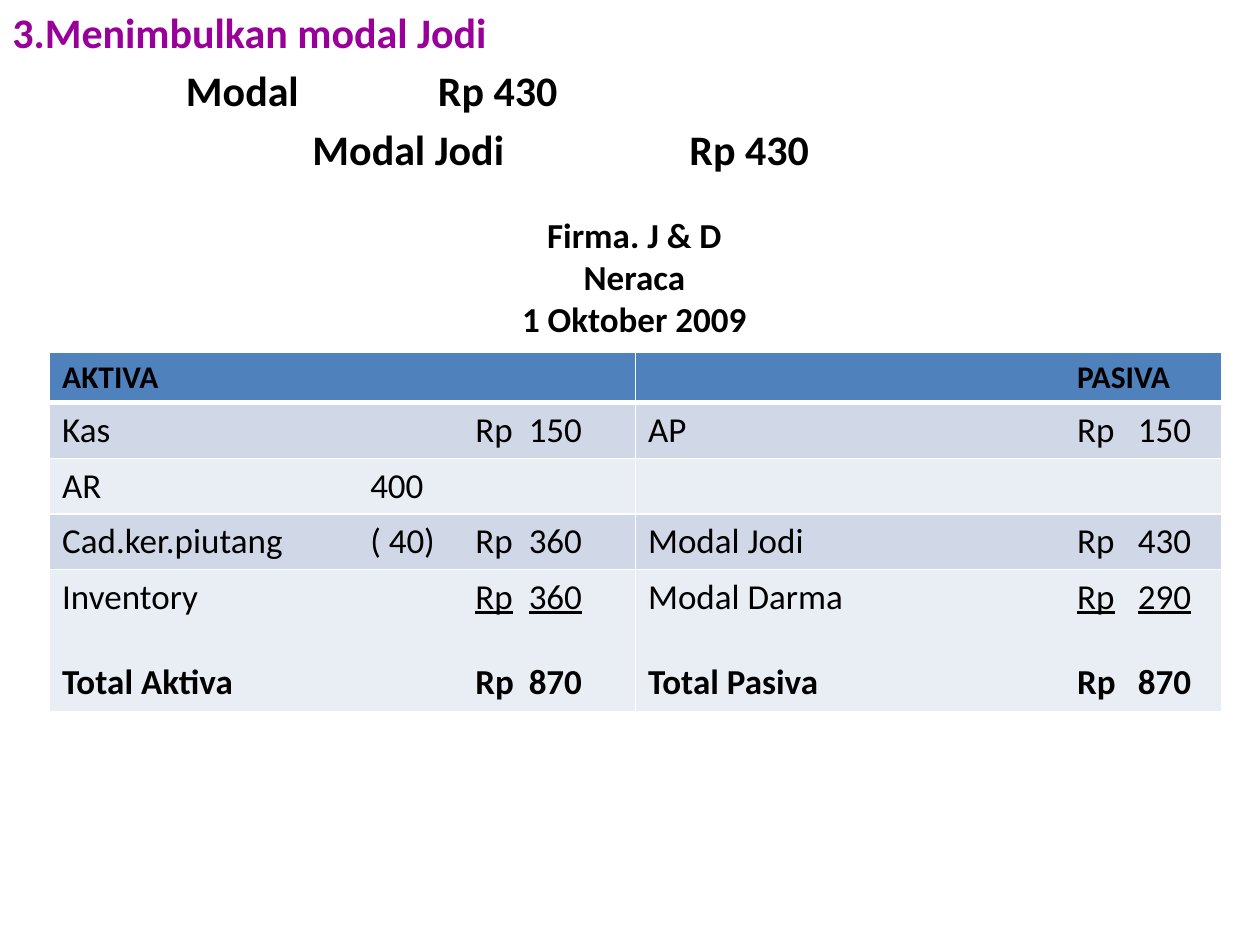
from lxml.etree import SubElement
from pptx import Presentation
from pptx.dml.color import RGBColor
from pptx.enum.text import PP_ALIGN
from pptx.oxml.ns import qn
from pptx.util import Cm, Pt

# Content: journal lines as (text, colour, tab stops in cm)
JOURNAL = [
    ("3.Menimbulkan modal Jodi", "990099", []),
    ("\tModal\tRp 430", "000000", [(3.5, "l"), (8.58, "l")]),
    ("\tModal Jodi\tRp 430", "000000", [(6.05, "l"), (13.65, "l")]),
]
TITLE = ["Firma. J & D", "Neraca", "1 Oktober 2009"]

# Each cell holds lines of (label, amount, style)
HEAD, ITEM, LAST, TOTAL = "head", "item", "last", "total"
ROWS = [
    ([("AKTIVA", "", HEAD)], [("\tPASIVA", "", HEAD)]),
    ([("Kas\t\t", "Rp\t150", ITEM)], [("AP\t", "Rp\t150", ITEM)]),
    ([("AR\t400", "", ITEM)], []),
    ([("Cad.ker.piutang\t( 40)\t", "Rp\t360", ITEM)],
     [("Modal Jodi\t", "Rp\t430", ITEM)]),
    ([("Inventory\t\t", "Rp\t360", LAST), ("Total Aktiva\t\t", "Rp\t870", TOTAL)],
     [("Modal Darma\t", "Rp\t290", LAST), ("Total Pasiva\t", "Rp\t870", TOTAL)]),
]
STOPS = [
    [(6.21, "l"), (8.33, "l"), (10.48, "r")],
    [(8.65, "l"), (10.95, "r")],
]
HIGH = [1.02, 1.12, 1.12, 1.12, 2.87]
WIDE = 11.81
FILLS = ["4F81BD", "D0D8E8", "E9EDF4"]


def hue(code):
    return RGBColor.from_string(code)


def set_font(par, size, bold, color="000000"):
    font = par.font
    font.name, font.size, font.bold = "Calibri", Pt(size), bold
    font.color.rgb = hue(color)


def set_tabs(par, stops):
    tabs = SubElement(par._p.get_or_add_pPr(), qn("a:tabLst"))
    for pos, side in stops:
        SubElement(tabs, qn("a:tab"), pos=str(Cm(pos)), algn=side)


def add_box(slide, left, top, width, height):
    frame = slide.shapes.add_textbox(Cm(left), Cm(top), Cm(width), Cm(height)).text_frame
    frame.word_wrap = True
    return frame


def next_par(frame, index):
    return frame.add_paragraph() if index else frame.paragraphs[0]


def set_edges(cell, low):
    props = cell._tc.get_or_add_tcPr()
    for side, width in (("L", 1), ("R", 1), ("T", 1), ("B", low)):
        line = SubElement(props, qn("a:ln" + side), w=str(Pt(width)))
        fill = SubElement(line, qn("a:solidFill"))
        SubElement(fill, qn("a:srgbClr"), val="FFFFFF")


def fill_cell(cell, lines, stops):
    for i, (label, amount, style) in enumerate(lines):
        par = next_par(cell.text_frame, i)
        set_tabs(par, stops)
        if style == TOTAL:
            par.space_before = Pt(24)
        set_font(par, 18 if style == HEAD else 20, style in (HEAD, TOTAL))
        par.add_run().text = label
        if amount:
            run = par.add_run()
            run.text = amount
            if style == LAST:
                run.font.underline = True


deck = Presentation()
deck.slide_width, deck.slide_height = Cm(25.4), Cm(19.05)
slide = deck.slides.add_slide(deck.slide_layouts[6])

# Journal entry
frame = add_box(slide, 0, 0, 25.4, 19.05)
for i, (text, color, stops) in enumerate(JOURNAL):
    par = next_par(frame, i)
    set_tabs(par, stops)
    par.space_before = Pt(4.8)
    set_font(par, 24, True, color)
    par.add_run().text = text

# Balance sheet table
table = slide.shapes.add_table(
    len(ROWS), 2, Cm(1), Cm(7.1), Cm(2 * WIDE), Cm(sum(HIGH))).table
for col in table.columns:
    col.width = Cm(WIDE)
for r, row in enumerate(ROWS):
    table.rows[r].height = Cm(HIGH[r])
    for c, lines in enumerate(row):
        cell = table.cell(r, c)
        set_edges(cell, 1 if r else 3)
        cell.fill.solid()
        cell.fill.fore_color.rgb = hue(FILLS[2 - r % 2 if r else 0])
        fill_cell(cell, lines, STOPS[c])

# Balance sheet title
frame = add_box(slide, 9.12, 4.17, 7.34, 2.82)
for i, text in enumerate(TITLE):
    par = next_par(frame, i)
    par.alignment = PP_ALIGN.CENTER
    set_font(par, 20, True)
    par.add_run().text = text

deck.save("out.pptx")
